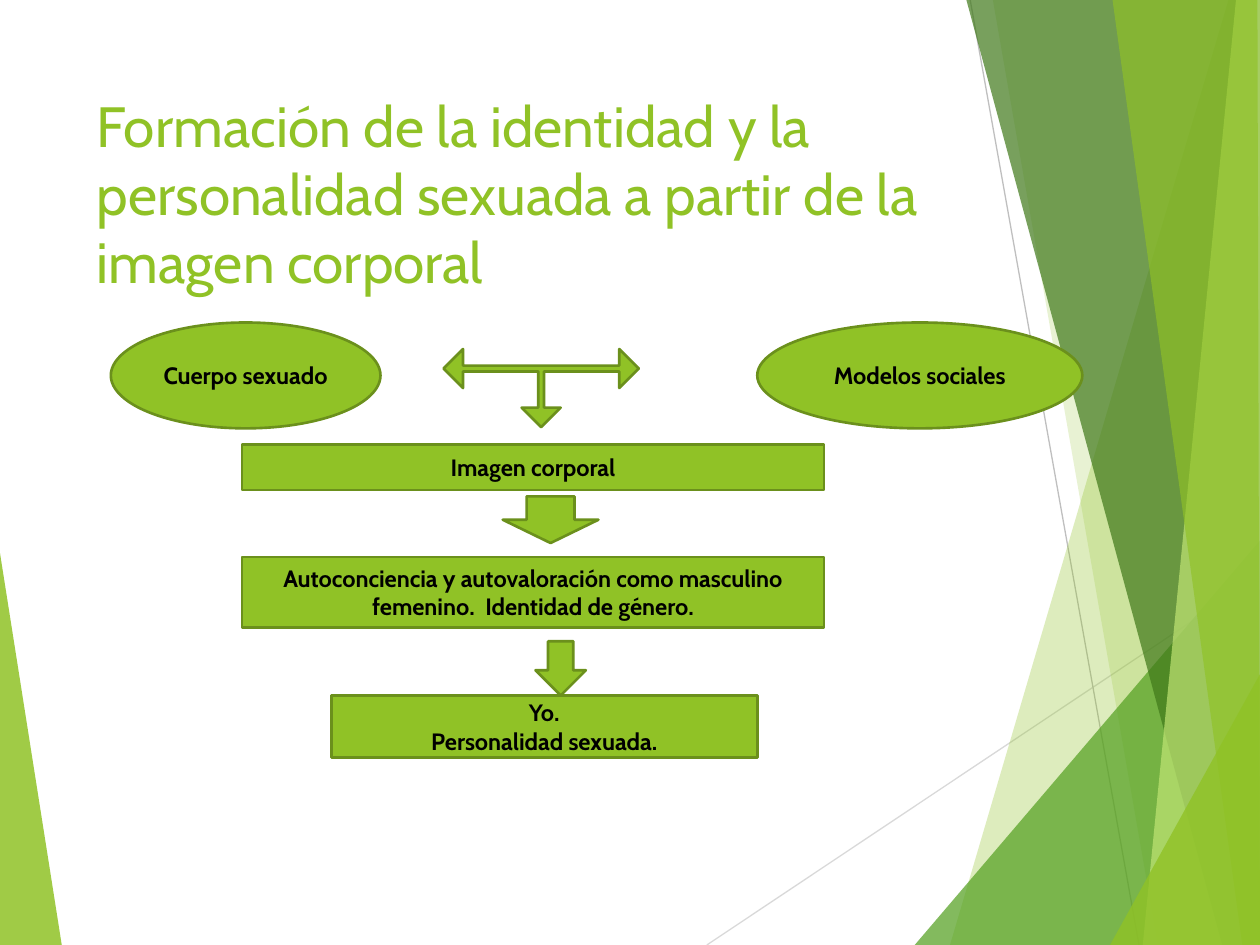
import lxml.etree
import pptx
import pptx.dml.color
import pptx.enum.shapes
import pptx.enum.text
import pptx.oxml.ns
import pptx.util

Inches = pptx.util.Inches
Pt = pptx.util.Pt
RGBColor = pptx.dml.color.RGBColor
MSO_SHAPE = pptx.enum.shapes.MSO_SHAPE
qn = pptx.oxml.ns.qn

LIME = RGBColor(0x90, 0xC2, 0x26)
OLIVE = RGBColor(0x6B, 0x90, 0x1C)
GREEN = RGBColor(0x54, 0xA0, 0x21)
FOREST = RGBColor(0x3F, 0x78, 0x19)
PALE = RGBColor(0xC0, 0xE4, 0x74)
SILVER = RGBColor(0xBF, 0xBF, 0xBF)
LIGHT_GRAY = RGBColor(0xD9, 0xD9, 0xD9)
BLACK = RGBColor(0, 0, 0)
FONT = "Cabin"

prs = pptx.Presentation()
prs.slide_width = Inches(10)
prs.slide_height = Inches(7.5)
slide = prs.slides.add_slide(prs.slide_layouts[6])
shapes = slide.shapes


def add_facet(points, color, opacity):
    """Draw a translucent polygon; points in inches, opacity in percent."""
    corners = [(Inches(x), Inches(y)) for x, y in points]
    builder = shapes.build_freeform(*corners[0])
    builder.add_line_segments(corners[1:])
    sp = builder.convert_to_shape()
    sp.shadow.inherit = False
    sp.line.fill.background()
    sp.fill.solid()
    sp.fill.fore_color.rgb = color
    clr = sp._element.spPr.find(qn("a:solidFill"))[0]
    lxml.etree.SubElement(clr, qn("a:alpha"), val=str(opacity * 1000))


def add_green_shape(kind, left, top, width, height, lines=()):
    sp = shapes.add_shape(kind, Inches(left), Inches(top), Inches(width), Inches(height))
    sp.shadow.inherit = False
    sp.fill.solid()
    sp.fill.fore_color.rgb = LIME
    sp.line.color.rgb = OLIVE
    sp.line.width = Pt(1.5)
    tf = sp.text_frame
    tf.vertical_anchor = pptx.enum.text.MSO_ANCHOR.MIDDLE
    for i, line in enumerate(lines):
        p = tf.add_paragraph() if i else tf.paragraphs[0]
        p.alignment = pptx.enum.text.PP_ALIGN.CENTER
        r = p.add_run()
        r.text = line
        r.font.name = FONT
        r.font.size = Pt(13.5)
        r.font.bold = True
        r.font.color.rgb = BLACK
    return sp


# Background decoration
add_facet([(0, 4.39), (0.49, 7.5), (0, 7.5)], LIME, 85)

for x1, y1, x2, y2, color in [
    (5.61, 7.5, 10, 4.57, LIGHT_GRAY),
    (7.7, 0, 9.04, 7.5, SILVER),
]:
    line = shapes.add_connector(
        pptx.enum.shapes.MSO_CONNECTOR.STRAIGHT,
        Inches(x1), Inches(y1), Inches(x2), Inches(y2))
    line.line.color.rgb = color
    line.line.width = Pt(0.75)
    lxml.etree.SubElement(line._element.spPr, qn("a:effectLst"))

for points, color, opacity in [
    ([(9.75, 0), (7.54, 7.5), (10, 7.5), (10, 0)], LIME, 30),
    ([(7.88, 0), (9.19, 7.5), (10, 7.5), (10, 0)], LIME, 20),
    ([(7.26, 7.5), (10, 4.29), (10, 7.5)], GREEN, 72),
    ([(7.67, 0), (9.7, 7.5), (10, 7.5), (10, 0)], FOREST, 70),
    ([(9.81, 0), (9.07, 7.5), (10, 7.5), (10, 0)], PALE, 70),
    ([(8.83, 0), (9.86, 7.5), (10, 7.5), (9.98, 0)], LIME, 65),
    ([(8.81, 7.5), (10, 5.35), (10, 7.5)], LIME, 80),
]:
    add_facet(points, color, opacity)

# Title
title = shapes.add_textbox(Inches(0.67), Inches(0.67), Inches(6.94), Inches(1.44))
tf = title.text_frame
tf.word_wrap = True
r = tf.paragraphs[0].add_run()
r.text = "Formación de la identidad y la personalidad sexuada a partir de la imagen corporal"
r.font.name = FONT
r.font.size = Pt(32.4)
r.font.color.rgb = LIME

# Diagram
add_green_shape(MSO_SHAPE.OVAL, 0.88, 2.56, 2.14, 0.84, ["Cuerpo sexuado"])
add_green_shape(MSO_SHAPE.OVAL, 6.01, 2.56, 2.58, 0.84, ["Modelos sociales"])

three_way = add_green_shape(MSO_SHAPE.LEFT_RIGHT_UP_ARROW, 3.52, 2.77, 1.55, 0.62)
three_way.adjustments[0] = 0.074
three_way.adjustments[1] = 0.25
three_way.adjustments[2] = 0.25
three_way._element.spPr.find(qn("a:xfrm")).set("flipV", "1")

for left, top, width, height, lines in [
    (1.92, 3.53, 4.62, 0.36, ["Imagen corporal"]),
    (1.92, 4.42, 4.62, 0.56,
     ["Autoconciencia y autovaloración como masculino femenino.  Identidad de género."]),
    (2.63, 5.52, 3.38, 0.49, ["Yo.", "Personalidad sexuada."]),
]:
    add_green_shape(MSO_SHAPE.RECTANGLE, left, top, width, height, lines)

add_green_shape(MSO_SHAPE.DOWN_ARROW, 3.99, 3.94, 0.76, 0.37)
add_green_shape(MSO_SHAPE.DOWN_ARROW, 4.25, 5.09, 0.4, 0.43)

prs.save("out.pptx")
